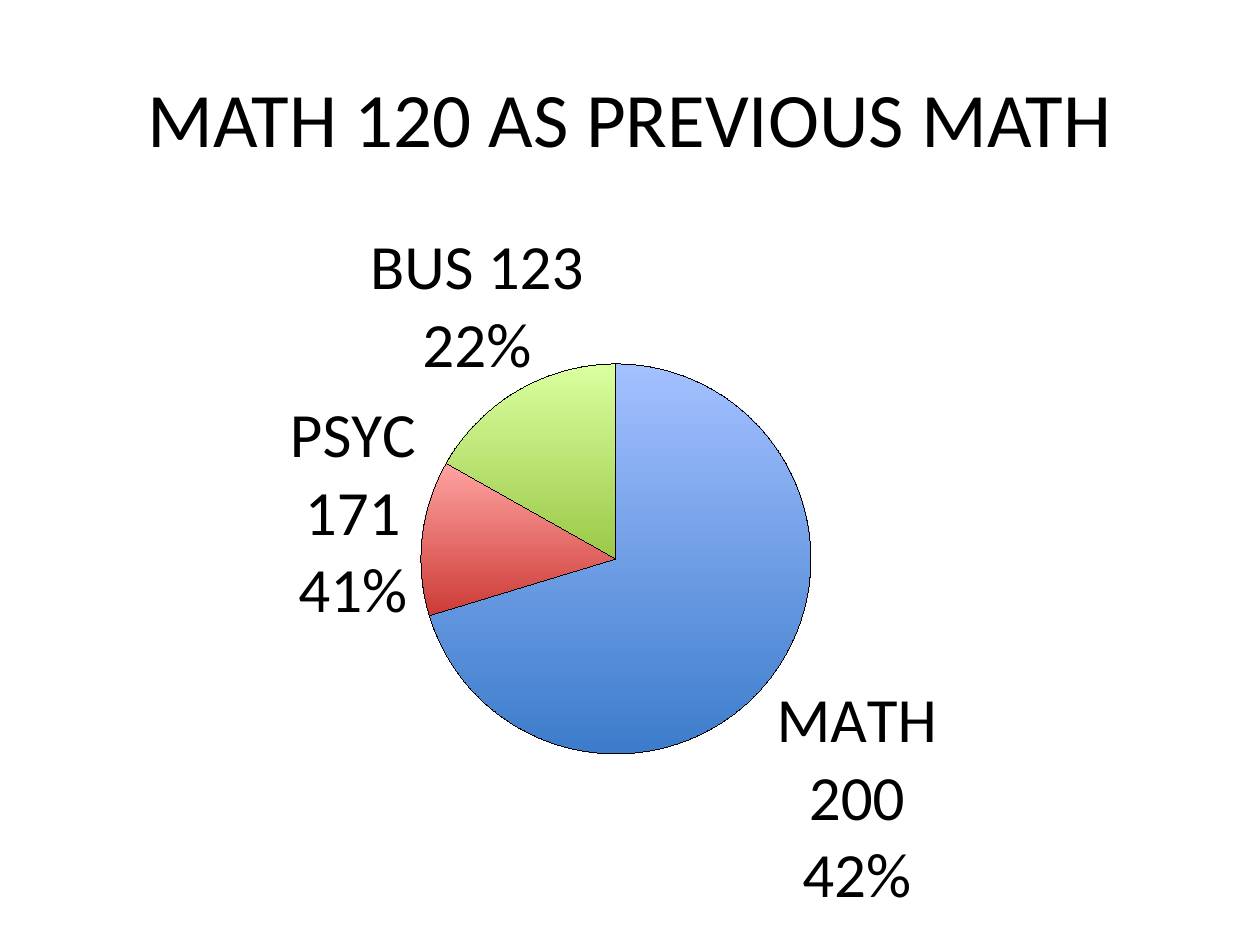
from lxml.etree import SubElement
from pptx import Presentation
from pptx.chart.data import CategoryChartData
from pptx.dml.color import RGBColor
from pptx.enum.chart import XL_CHART_TYPE, XL_LABEL_POSITION
from pptx.enum.text import MSO_ANCHOR, PP_ALIGN
from pptx.oxml.ns import qn
from pptx.util import Emu, Pt

SCALE = 914400 / 126
COLOURS = {
    "text": "000000",
    "blue_top": "A3C0FF", "blue_bottom": "3C7CCB",
    "red_top": "FFA3A1", "red_bottom": "CC3B37",
    "green_top": "DAFF9F", "green_bottom": "9BC848",
}
COURSES = [
    ("MATH 200", 71, "42%", "blue", (-2, 3)),
    ("PSYC 171", 13, "41%", "red", (1, 93)),
    ("BUS 123", 17, "22%", "green", (70, 0)),
]


def px(length):
    return Emu(round(length * SCALE))


def colour(name):
    return RGBColor.from_string(COLOURS[name])


def set_format(target, values):
    for name, value in values.items():
        setattr(target, name, value)


def style_font(font, size):
    set_format(font, {"name": "Calibri", "size": Pt(size), "bold": False})
    font.color.rgb = colour("text")


def add_title(page, box, text):
    frame = page.shapes.add_textbox(*map(px, box)).text_frame
    set_format(frame, {"word_wrap": True, "vertical_anchor": MSO_ANCHOR.MIDDLE})
    para = frame.paragraphs[0]
    para.alignment = PP_ALIGN.CENTER
    span = para.add_run()
    span.text = text
    style_font(span.font, 44)


def add_layout(parent, index, values):
    layout = parent.find(qn("c:layout"))
    if layout is None:
        layout = parent.makeelement(qn("c:layout"), {})
        parent.insert(index, layout)
    manual = SubElement(layout, qn("c:manualLayout"))
    for name, value in values.items():
        SubElement(manual, qn(f"c:{name}"), val=str(value))


def place_plot(chart, box, plot_box):
    left, top, width, height = plot_box
    add_layout(chart._chartSpace.chart.plotArea, 0, {
        "layoutTarget": "inner", "xMode": "edge", "yMode": "edge",
        "x": round(left / box[2], 4), "y": round(top / box[3], 4),
        "w": round(width / box[2], 4), "h": round(height / box[3], 4),
    })


def shift_labels(chart, box, shifts):
    for label, (right, down) in zip(chart._chartSpace.iter(qn("c:dLbl")), shifts):
        add_layout(label, 1, {
            "x": round(right / box[2], 4), "y": round(down / box[3], 4),
        })


def style_slice(point, hue):
    fill = point.format.fill
    fill.gradient()
    fill.gradient_angle = 270
    for stop, end, position in zip(fill.gradient_stops, ("top", "bottom"), (0, 1)):
        stop.color.rgb = colour(f"{hue}_{end}")
        stop.position = position
    point.format.line.color.rgb = colour("text")


def label_slice(point, lines):
    label = point.data_label
    frame = label.text_frame
    for index, text in enumerate(lines):
        para = frame.add_paragraph() if index else frame.paragraphs[0]
        span = para.add_run()
        span.text = text
        style_font(span.font, 36)
    label.position = XL_LABEL_POSITION.OUTSIDE_END


def add_course_pie(page, box, courses):
    data = CategoryChartData()
    data.categories = [course for course, *_ in courses]
    data.add_series("Series 1", [value for _, value, *_ in courses])
    chart = page.shapes.add_chart(XL_CHART_TYPE.PIE, *map(px, box), data).chart
    set_format(chart, {"has_title": False, "has_legend": False})
    style_font(chart.font, 10)
    place_plot(chart, box, (389, 157, 390, 390))
    plot = chart.plots[0]
    set_format(plot, {"vary_by_categories": True, "has_data_labels": True})
    labels = plot.data_labels
    set_format(labels, {
        "show_category_name": True, "show_percentage": True,
        "show_value": False, "position": XL_LABEL_POSITION.OUTSIDE_END,
    })
    style_font(labels.font, 36)
    series = plot.series[0]
    series.format.line.color.rgb = colour("text")
    series.format.line.width = Pt(0.75)
    for index, (course, _, share, hue, _) in enumerate(courses):
        point = series.points[index]
        style_slice(point, hue)
        label_slice(point, (course, share))
    shift_labels(chart, box, [shift for *_, shift in courses])


def main():
    deck = Presentation()
    set_format(deck, {"slide_width": px(1260), "slide_height": px(945)})
    page = deck.slides.add_slide(deck.slide_layouts[6])
    add_course_pie(page, (32, 207, 1165, 738), COURSES)
    add_title(page, (63, 38, 1134, 157), "MATH 120 AS PREVIOUS MATH")
    deck.save("out.pptx")


if __name__ == "__main__":
    main()
